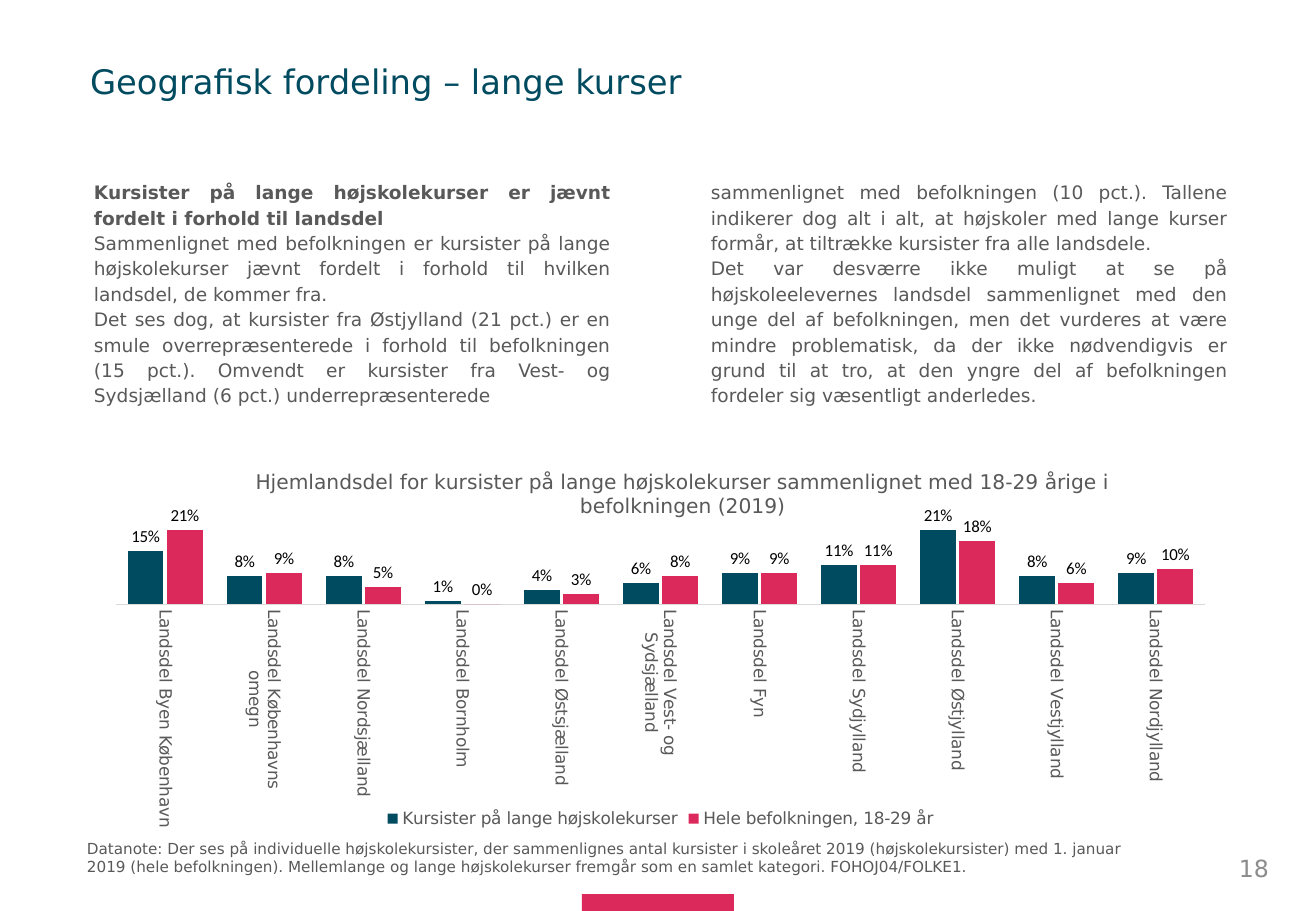
from lxml.etree import SubElement
from pptx import Presentation
from pptx.chart.data import CategoryChartData
from pptx.dml.color import RGBColor
from pptx.enum.chart import XL_CHART_TYPE, XL_LABEL_POSITION, XL_LEGEND_POSITION, XL_TICK_MARK
from pptx.enum.shapes import MSO_SHAPE
from pptx.enum.text import MSO_ANCHOR, MSO_AUTO_SIZE, PP_ALIGN
from pptx.oxml.ns import qn
from pptx.util import Emu, Pt

PX = 7526  # EMU per px
FONT = "DejaVu Sans"
COLORS = {
    "petrol": "004B60",
    "raspberry": "DC295C",
    "text": "595959",
    "page": "8C8C8C",
    "axis": "D9D9D9",
    "label": "000000",
}
LEFT_HEADING = "Kursister på lange højskolekurser er jævnt fordelt i forhold til landsdel"
LEFT_TEXT = [
    "Sammenlignet med befolkningen er kursister på lange højskolekurser jævnt fordelt i "
    "forhold til hvilken landsdel, de kommer fra.",
    "Det ses dog, at kursister fra Østjylland (21 pct.) er en smule overrepræsenterede i "
    "forhold til befolkningen (15 pct.). Omvendt er kursister fra Vest- og Sydsjælland "
    "(6 pct.) underrepræsenterede",
]
RIGHT_TEXT = [
    "sammenlignet med befolkningen (10 pct.). Tallene indikerer dog alt i alt, at højskoler "
    "med lange kurser formår, at tiltrække kursister fra alle landsdele.",
    "Det var desværre ikke muligt at se på højskoleelevernes landsdel sammenlignet med den "
    "unge del af befolkningen, men det vurderes at være mindre problematisk, da der ikke "
    "nødvendigvis er grund til at tro, at den yngre del af befolkningen fordeler sig "
    "væsentligt anderledes.",
]
DATA_NOTE = (
    "Datanote: Der ses på individuelle højskolekursister, der sammenlignes antal kursister i "
    "skoleåret 2019 (højskolekursister) med 1. januar 2019 (hele befolkningen). Mellemlange og "
    "lange højskolekurser fremgår som en samlet kategori. FOHOJ04/FOLKE1."
)
CHART_TITLE = (
    "Hjemlandsdel for kursister på lange højskolekurser sammenlignet med 18-29 årige i "
    "befolkningen (2019)"
)
# The two longest names break into two lines to stay clear of the legend.
REGIONS = [
    "Byen København", "Københavns\nomegn", "Nordsjælland", "Bornholm", "Østsjælland",
    "Vest- og\nSydsjælland", "Fyn", "Sydjylland", "Østjylland", "Vestjylland", "Nordjylland",
]
SHARES = [
    ("Kursister på lange højskolekurser", "petrol",
     [0.15, 0.08, 0.08, 0.01, 0.04, 0.06, 0.09, 0.11, 0.21, 0.08, 0.09]),
    ("Hele befolkningen, 18-29 år", "raspberry",
     [0.21, 0.09, 0.05, 0, 0.03, 0.08, 0.09, 0.11, 0.18, 0.06, 0.1]),
]


def px(*lengths):
    return [Emu(length * PX) for length in lengths]


def style_font(font, size, color, bold=False, name=FONT):
    font.name = name
    font.size = Pt(size)
    font.bold = bold
    font.color.rgb = RGBColor.from_string(COLORS[color])


def add_title(slide, text):
    title = slide.shapes.title
    title.left, title.top, title.width, title.height = px(90, 49, 1135, 69)
    frame = title.text_frame
    frame.text = text
    frame.auto_size = MSO_AUTO_SIZE.NONE
    frame.vertical_anchor = MSO_ANCHOR.MIDDLE
    frame.margin_left = 0
    line = frame.paragraphs[0]
    line.alignment = PP_ALIGN.LEFT
    line.line_spacing = 0.9
    style_font(line.runs[0].font, 20, "petrol")


def add_text(slide, box, paragraphs, size, color, align=PP_ALIGN.LEFT):
    frame = slide.shapes.add_textbox(*px(*box)).text_frame
    frame.word_wrap = True
    frame.text = "\n".join(paragraphs)
    for paragraph in frame.paragraphs:
        paragraph.alignment = align
        style_font(paragraph.runs[0].font, size, color)
    return frame


def add_column(slide, box, paragraphs):
    """Add a justified body column without insets."""
    frame = add_text(slide, box, paragraphs, 11, "text", PP_ALIGN.JUSTIFY)
    frame.margin_left = frame.margin_top = frame.margin_right = frame.margin_bottom = 0
    for paragraph in frame.paragraphs:
        paragraph.line_spacing = 1.14
    return frame


def add_footer_bar(slide, box):
    bar = slide.shapes.add_shape(MSO_SHAPE.RECTANGLE, *px(*box))
    bar.shadow.inherit = False
    bar.fill.solid()
    bar.fill.fore_color.rgb = RGBColor.from_string(COLORS["raspberry"])
    bar.line.fill.background()


def set_layout(part, **fractions):
    """Place a chart part by fractions of the chart area."""
    layout = part.find(qn("c:layout"))
    if layout is None:
        layout = SubElement(part, qn("c:layout"))
        neighbour = part.find(qn("c:tx"))
        if neighbour is not None:
            neighbour.addnext(layout)
        else:
            part.insert(0, layout)
    for child in list(layout):
        layout.remove(child)
    manual = SubElement(layout, qn("c:manualLayout"))
    if "w" in fractions:
        SubElement(manual, qn("c:layoutTarget")).set("val", "inner")
    for mode in ("xMode", "yMode"):
        SubElement(manual, qn(f"c:{mode}")).set("val", "edge")
    for key, value in fractions.items():
        SubElement(manual, qn(f"c:{key}")).set("val", str(value))


def style_axes(chart):
    regions = chart.category_axis
    regions.major_tick_mark = XL_TICK_MARK.NONE
    regions.format.line.color.rgb = RGBColor.from_string(COLORS["axis"])
    regions.format.line.width = Pt(0.75)
    style_font(regions.tick_labels.font, 10, "text")
    label_body = regions._element.find(qn("c:txPr")).find(qn("a:bodyPr"))
    label_body.set("rot", "5400000")
    label_body.set("vert", "horz")
    shares = chart.value_axis
    shares.minimum_scale, shares.maximum_scale = 0, 0.25
    shares.has_major_gridlines = False
    shares.visible = False


def add_share_chart(slide, box):
    table = CategoryChartData(number_format="0%")
    table.categories = [f"Landsdel {region}" for region in REGIONS]
    for name, _, values in SHARES:
        table.add_series(name, values)
    chart = slide.shapes.add_chart(XL_CHART_TYPE.COLUMN_CLUSTERED, *px(*box), table).chart
    style_font(chart.font, 10, "label", name="Calibri")

    chart.has_title = True
    heading = chart.chart_title.text_frame
    heading.text = CHART_TITLE
    style_font(heading.paragraphs[0].runs[0].font, 12, "text")
    set_layout(chart.chart_title._element, x=0.14, y=0.08)

    chart.has_legend = True
    chart.legend.position = XL_LEGEND_POSITION.BOTTOM
    chart.legend.include_in_layout = False
    style_font(chart.legend.font, 10, "text")

    style_axes(chart)
    plot = chart.plots[0]
    plot.gap_width, plot.overlap = 68, -10
    plot.vary_by_categories = False
    for series, (_, color, _) in zip(plot.series, SHARES):
        series.format.fill.solid()
        series.format.fill.fore_color.rgb = RGBColor.from_string(COLORS[color])
        labels = series.data_labels
        labels.show_value = True
        labels.position = XL_LABEL_POSITION.OUTSIDE_END
        labels.number_format, labels.number_format_is_linked = "0%", False
        style_font(labels.font, 10, "label", name="Calibri")
    set_layout(chart._chartSpace.chart.plotArea, x=0.02, y=0.21, w=0.96, h=0.22)


def main():
    deck = Presentation()
    deck.slide_width, deck.slide_height = px(1316, 911)
    slide = deck.slides.add_slide(deck.slide_layouts[5])
    add_footer_bar(slide, (582, 894, 152, 17))
    add_title(slide, "Geografisk fordeling – lange kurser")
    left_column = add_column(slide, (94, 178, 517, 186), [LEFT_HEADING, *LEFT_TEXT])
    left_column.paragraphs[0].runs[0].font.bold = True
    add_column(slide, (711, 178, 517, 254), RIGHT_TEXT)
    add_share_chart(slide, (93, 432, 1135, 401))
    add_text(slide, (75, 833, 1069, 49), [DATA_NOTE], 9, "text")
    page = add_text(slide, (929, 844, 352, 49), ["18"], 14, "page", PP_ALIGN.RIGHT)
    page.vertical_anchor = MSO_ANCHOR.MIDDLE
    deck.save("out.pptx")


if __name__ == "__main__":
    main()
